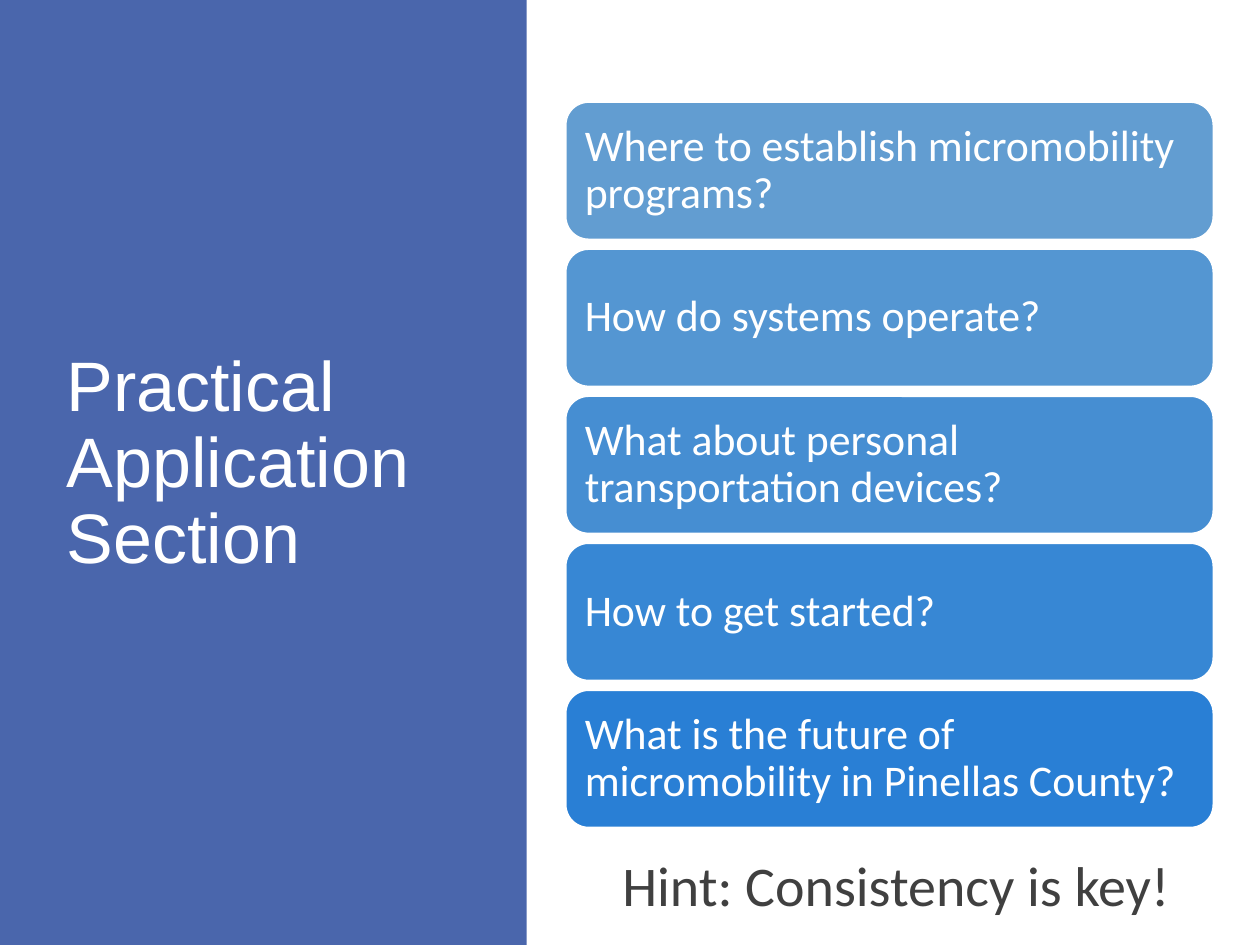
import pptx
import pptx.util
import pptx.dml.color
import pptx.enum.shapes
import pptx.enum.text

Inches = pptx.util.Inches
SHAPES = pptx.enum.shapes.MSO_SHAPE
MIDDLE = pptx.enum.text.MSO_ANCHOR.MIDDLE
LEFT = pptx.enum.text.PP_ALIGN.LEFT

# Content
TITLE = "Practical Application Section"
QUESTIONS = [
    ("Where to establish micromobility programs?", "629DD1"),
    ("How do systems operate?", "5496D2"),
    ("What about personal transportation devices?", "468ED2"),
    ("How to get started?", "3787D4"),
    ("What is the future of micromobility in Pinellas County?", "297FD5"),
]
HINT = "Hint: Consistency is key!"
COLORS = {"panel": "4A66AC", "white": "FFFFFF", "hint": "404040"}

# Card column, in inches
CARD_LEFT, CARD_TOP, CARD_WIDTH, CARD_HEIGHT = 4.49, 0.81, 5.14, 1.09
CARD_STEP = 1.167


def rgb(value):
    return pptx.dml.color.RGBColor.from_string(value)


def add_block(slide, kind, left, top, width, height, fill):
    block = slide.shapes.add_shape(
        kind, Inches(left), Inches(top), Inches(width), Inches(height))
    block.shadow.inherit = False
    block.fill.solid()
    block.fill.fore_color.rgb = rgb(fill)
    block.line.fill.background()
    return block


def write(frame, text, size, font, color, spacing=None):
    para = frame.paragraphs[0]
    para.alignment = LEFT
    if spacing:
        para.line_spacing = spacing
    span = para.add_run()
    span.text = text
    span.font.size = pptx.util.Pt(size)
    span.font.name = font
    span.font.color.rgb = rgb(color)


def main():
    deck = pptx.Presentation()
    deck.slide_width, deck.slide_height = Inches(10), Inches(7.5)
    slide = deck.slides.add_slide(deck.slide_layouts[5])

    # Side panel, placed behind the title
    panel = add_block(slide, SHAPES.RECTANGLE, 0, 0, 4.18, 7.5, COLORS["panel"])
    title = slide.shapes.title
    title._element.addprevious(panel._element)

    # Title
    title.left, title.top = Inches(0.43), Inches(0.68)
    title.width, title.height = Inches(3.12), Inches(6.02)
    title.text_frame.word_wrap = True
    title.text_frame.auto_size = pptx.enum.text.MSO_AUTO_SIZE.NONE
    title.text_frame.vertical_anchor = MIDDLE
    write(title.text_frame, TITLE, 40, "Arial", COLORS["white"], 0.9)

    # Question cards
    for index, (question, fill) in enumerate(QUESTIONS):
        card = add_block(slide, SHAPES.ROUNDED_RECTANGLE, CARD_LEFT,
                         CARD_TOP + index * CARD_STEP, CARD_WIDTH, CARD_HEIGHT, fill)
        card.line.color.rgb = rgb(COLORS["white"])
        card.line.width = pptx.util.Pt(1)
        frame = card.text_frame
        frame.word_wrap = True
        frame.vertical_anchor = MIDDLE
        # The rounded corners add about 0.05 to each side inset
        frame.margin_left = frame.margin_right = Inches(0.1)
        frame.margin_top = frame.margin_bottom = Inches(0.1)
        write(frame, question, 25, "Calibri", COLORS["white"], 0.9)

    # Hint below the cards
    hint = slide.shapes.add_textbox(
        Inches(4.84), Inches(6.7), Inches(4.59), Inches(0.64))
    hint.text_frame.word_wrap = False
    hint.text_frame.auto_size = pptx.enum.text.MSO_AUTO_SIZE.SHAPE_TO_FIT_TEXT
    write(hint.text_frame, HINT, 32, "Calibri", COLORS["hint"])

    deck.save("out.pptx")


if __name__ == "__main__":
    main()
